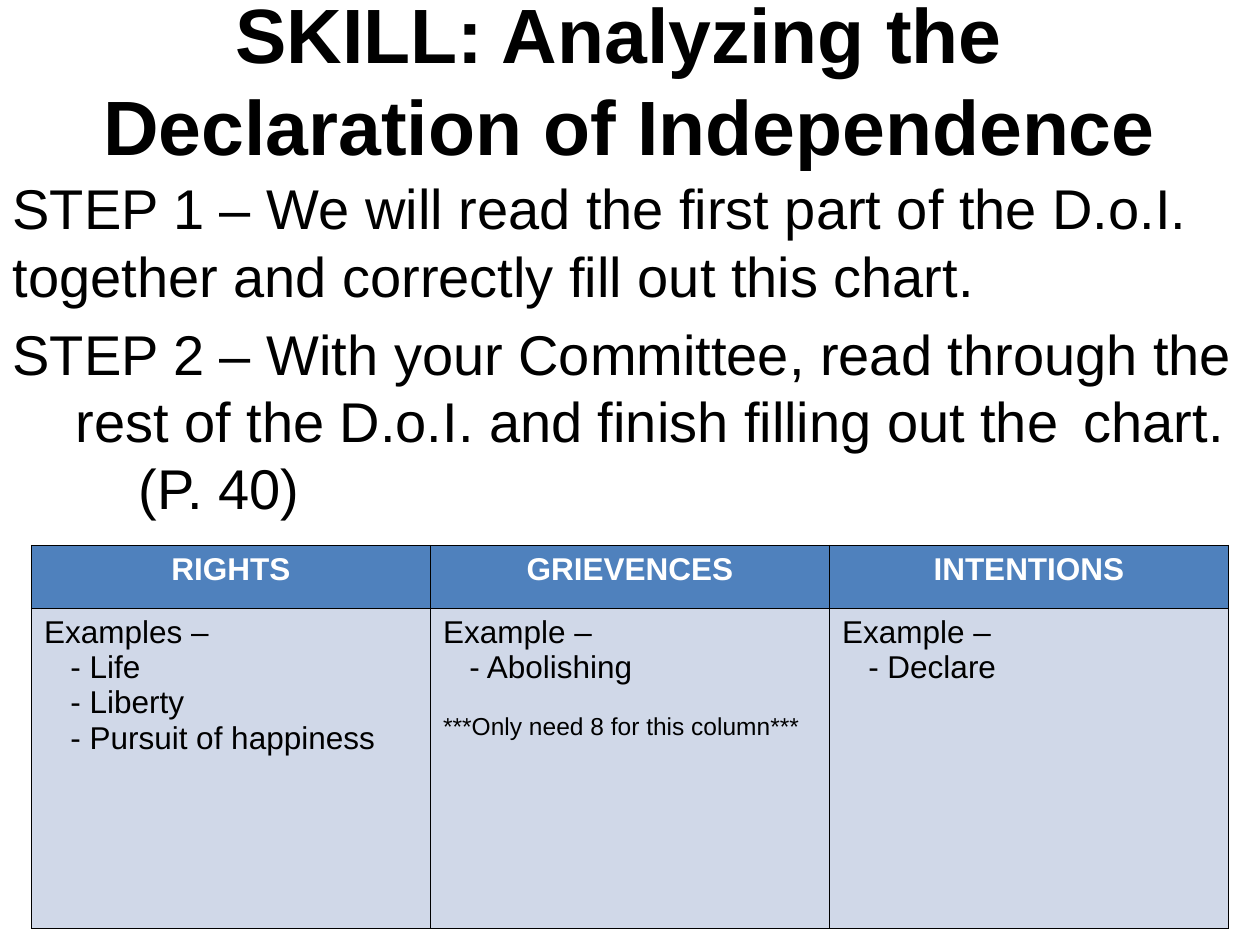
from pptx import Presentation
from pptx.dml.color import RGBColor
from pptx.enum.text import MSO_ANCHOR, MSO_AUTO_SIZE, PP_ALIGN
from pptx.oxml import parse_xml
from pptx.oxml.ns import nsdecls
from pptx.util import Inches, Pt

WIDTH, HEIGHT = 10, 7.5
TITLE = "SKILL: Analyzing the \vDeclaration of Independence"
STEPS = [
    "STEP 1 – We will read the first part of the D.o.I. \ttogether and correctly fill out this chart.",
    "STEP 2 – With your Committee, read through the \trest of the D.o.I. and finish filling out the "
    "\tchart.  \t\t(P. 40)",
]
COLUMNS = [
    {"head": "RIGHTS", "lead": "Examples –",
     "items": ["- Life", "- Liberty", "- Pursuit of happiness"]},
    {"head": "GRIEVENCES", "lead": "Example –", "items": ["- Abolishing"],
     "note": "***Only need 8 for this column***"},
    {"head": "INTENTIONS", "lead": "Example –", "items": ["- Declare"]},
]
BLACK, WHITE, BLUE, PALE = "000000", "FFFFFF", "4F81BD", "D0D8E8"
MARGIN, TABLE_TOP, ROWS = 0.25, 4.33, [0.5, 2.54]


def color(value):
    return RGBColor.from_string(value)


def style(para, size, ink=BLACK, bold=False):
    for span in para.runs:
        span.font.name = "Arial"
        span.font.size = Pt(size)
        span.font.bold = bold
        span.font.color.rgb = color(ink)


def place(shape, left, top, width, height):
    shape.left, shape.top = Inches(left), Inches(top)
    shape.width, shape.height = Inches(width), Inches(height)


def paint(cell, fill):
    cell.fill.solid()
    cell.fill.fore_color.rgb = color(fill)
    props = cell._tc.get_or_add_tcPr()
    for index, side in enumerate(("lnL", "lnR", "lnT", "lnB")):
        props.insert(index, parse_xml(
            f'<a:{side} {nsdecls("a")} w="{Pt(1)}"><a:solidFill>'
            f'<a:srgbClr val="{BLACK}"/></a:solidFill></a:{side}>'))


def fill_column(grid, index, column):
    head, body = grid.cell(0, index), grid.cell(1, index)
    paint(head, BLUE)
    paint(body, PALE)
    head.text_frame.text = column["head"]
    head.text_frame.paragraphs[0].alignment = PP_ALIGN.CENTER
    style(head.text_frame.paragraphs[0], 18, WHITE, True)
    body.text_frame.text = column["lead"]
    style(body.text_frame.paragraphs[0], 18)
    for item in column["items"]:
        para = body.text_frame.add_paragraph()
        para.text = item
        para._p.get_or_add_pPr().set("marL", str(Pt(15)))
        style(para, 18)
    if "note" in column:
        para = body.text_frame.add_paragraph()
        para.text = column["note"]
        para.space_before = Pt(16)
        style(para, 14)


def main():
    deck = Presentation()
    deck.slide_width, deck.slide_height = Inches(WIDTH), Inches(HEIGHT)
    page = deck.slides.add_slide(deck.slide_layouts[1])

    title = page.shapes.title
    place(title, 0, 0, WIDTH, HEIGHT / 6)
    title.text_frame.text = TITLE
    title.text_frame.auto_size = MSO_AUTO_SIZE.NONE
    title.text_frame.vertical_anchor = MSO_ANCHOR.MIDDLE
    title.text_frame.paragraphs[0].alignment = PP_ALIGN.CENTER
    style(title.text_frame.paragraphs[0], 44, BLACK, True)

    steps = page.placeholders[1]
    place(steps, 0, 1.33, WIDTH, HEIGHT - 1.33)
    steps.text_frame.text = "\n".join(STEPS)
    steps.text_frame.auto_size = MSO_AUTO_SIZE.NONE
    for index, para in enumerate(steps.text_frame.paragraphs):
        props = para._p.get_or_add_pPr()
        props.set("marL", "0")
        props.set("indent", "0")
        props.append(parse_xml(f'<a:buNone {nsdecls("a")}/>'))
        if index == 0:
            para.space_before = Pt(0)
        style(para, 32)

    frame = page.shapes.add_table(
        len(ROWS), len(COLUMNS), Inches(MARGIN), Inches(TABLE_TOP),
        Inches(WIDTH - 2 * MARGIN), Inches(sum(ROWS)))
    grid = frame.table
    for row, height in zip(grid.rows, ROWS):
        row.height = Inches(height)
    for index, column in enumerate(COLUMNS):
        fill_column(grid, index, column)

    deck.save("out.pptx")


if __name__ == "__main__":
    main()
